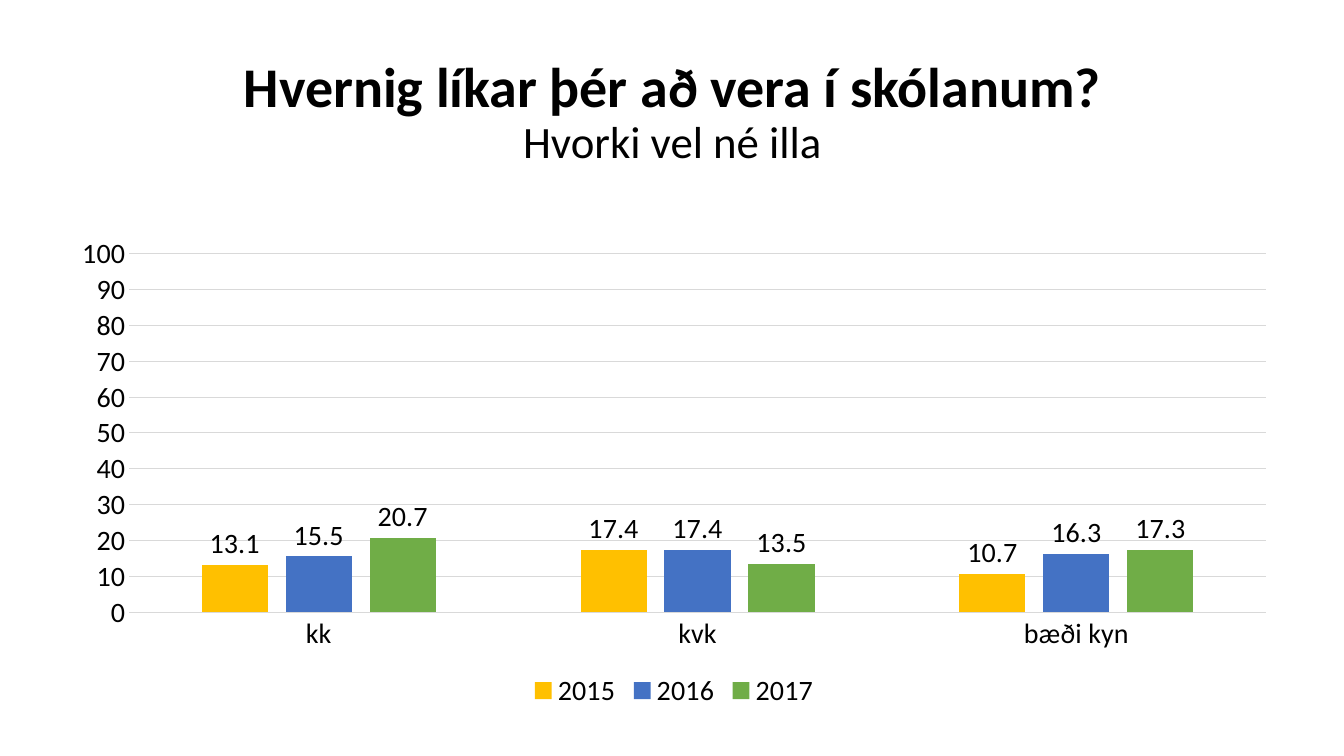
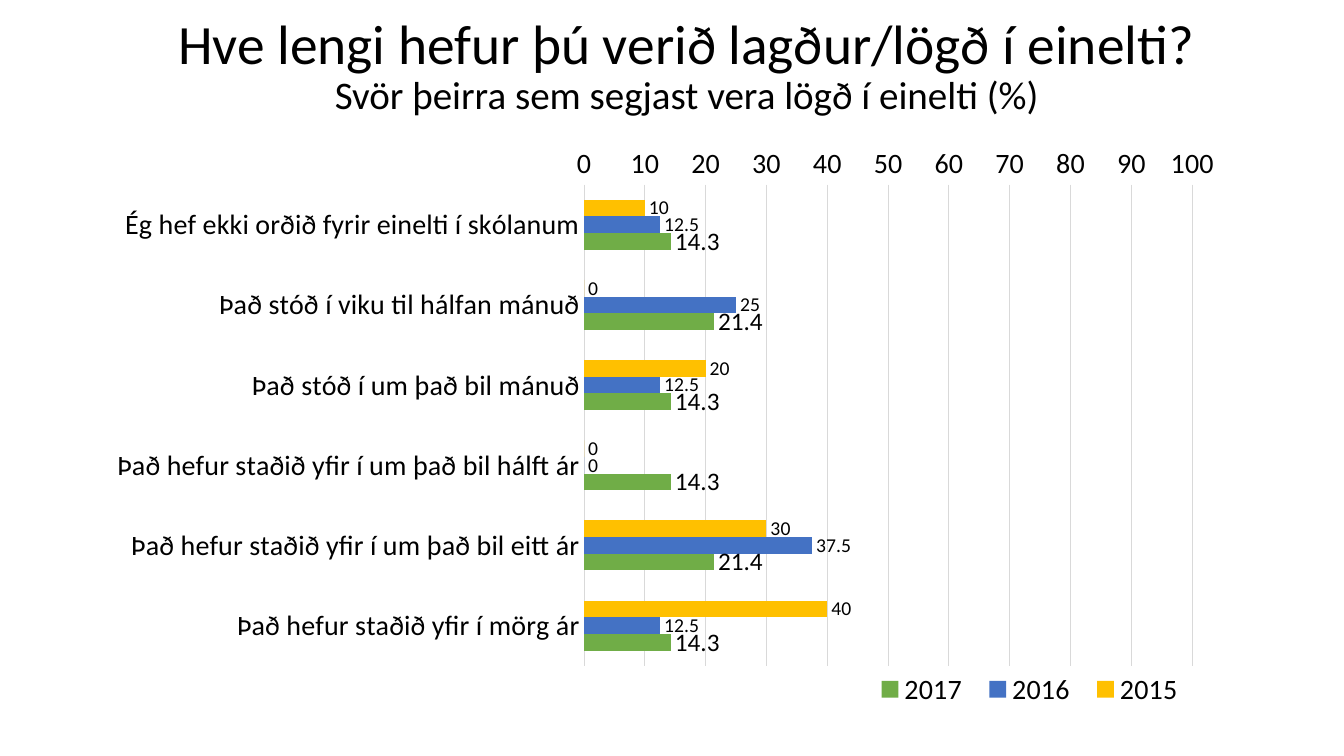
from lxml import etree
from pptx import Presentation
from pptx import util as u
from pptx.chart.data import CategoryChartData
from pptx.dml.color import RGBColor
from pptx.enum import chart as ch, text
from pptx.oxml import ns

WIDTH, HEIGHT = 13.33, 7.5
FONT, INK, RULE = "Calibri", "000000", "D9D9D9"
YEAR_COLOURS = {"2012": "5B9BD5", "2013": "ED7D31", "2014": "A5A5A5",
                "2015": "FFC000", "2016": "4472C4", "2017": "70AD47"}


def colour(value):
    """Turn a hex string into a colour."""
    return RGBColor.from_string(value)


def style_font(font, size, bold=False):
    """Give a font the shared face and ink."""
    font.name, font.size, font.bold = FONT, u.Pt(size), bold
    font.color.rgb = colour(INK)


def style_line(line):
    """Give an axis or grid line the shared thin grey."""
    line.color.rgb = colour(RULE)
    line.width = u.Pt(0.75)


def add_heading(slide, box, question, subtitle, anchor, margin=0.05):
    """Add a centred question with a smaller line below; each line is (text, size, bold)."""
    frame = slide.shapes.add_textbox(*map(u.Inches, box)).text_frame
    frame.word_wrap = True
    frame.vertical_anchor = anchor
    frame.margin_top = frame.margin_bottom = u.Inches(margin)
    heading = frame.paragraphs[0]
    heading.alignment = text.PP_ALIGN.CENTER
    heading.line_spacing = 0.9
    for index, (words, size, bold) in enumerate((question, subtitle)):
        if index:
            heading.add_line_break()
        run = heading.add_run()
        run.text = words
        style_font(run.font, size, bold)


def place(parent, position, shares, inner=False):
    """Fix the place of a chart part as shares of the chart's size."""
    for old in parent.findall(ns.qn("c:layout")):
        parent.remove(old)
    layout = etree.Element(ns.qn("c:layout"))
    manual = etree.SubElement(layout, ns.qn("c:manualLayout"))
    settings = [("layoutTarget", "inner")] if inner else []
    settings += [("xMode", "edge"), ("yMode", "edge"), *zip("xywh", shares)]
    for tag, value in settings:
        etree.SubElement(manual, ns.qn("c:" + tag)).set("val", str(value))
    parent.insert(position, layout)


def style_axes(chart):
    """Set up the answer axis and the percentage axis."""
    answers, percent = chart.category_axis, chart.value_axis
    for axis in (answers, percent):
        axis.major_tick_mark = axis.minor_tick_mark = ch.XL_TICK_MARK.NONE
        style_font(axis.tick_labels.font, 20)
    style_line(answers.format.line)
    percent.minimum_scale, percent.maximum_scale, percent.major_unit = 0, 100, 10
    percent.format.line.fill.background()
    percent.has_major_gridlines = True
    style_line(percent.major_gridlines.format.line)


def style_year(series, label_sizes, label_format):
    """Colour one year's bars and label them, or leave an unsurveyed year without values."""
    series.format.fill.solid()
    series.format.fill.fore_color.rgb = colour(YEAR_COLOURS[series.name])
    if series.name not in label_sizes:
        element = series.format.fill and series._element
        element.remove(element.find(ns.qn("c:val")))
        return
    labels = series.data_labels
    labels.show_value = True
    labels.position = ch.XL_LABEL_POSITION.OUTSIDE_END
    labels.number_format, labels.number_format_is_linked = label_format, False
    style_font(labels.font, label_sizes[series.name])


def add_year_chart(slide, kind, box, answers, results, gap, overlap, label_sizes, label_format):
    """Add a bar chart comparing the years and return it."""
    data = CategoryChartData()
    data.categories = answers
    for year in YEAR_COLOURS:
        data.add_series(year, results.get(year, ()))
    chart = slide.shapes.add_chart(kind, *map(u.Inches, box), data).chart
    chart.has_title = False
    style_font(chart.font, 10)
    style_axes(chart)
    plot = chart.plots[0]
    plot.vary_by_categories = False
    plot.gap_width, plot.overlap = gap, overlap
    for series in plot.series:
        style_year(series, label_sizes, label_format)
    chart.has_legend = True
    chart.legend.position = ch.XL_LEGEND_POSITION.BOTTOM
    chart.legend.include_in_layout = False
    style_font(chart.legend.font, 20)
    return chart


def build_school_slide(slide):
    """Show how many are neutral about school."""
    add_heading(slide, (0.92, 0.4, 11.5, 1.45),
                ("Hvernig líkar þér að vera í skólanum?", 40, True),
                ("Hvorki vel né illa", 32, False), text.MSO_ANCHOR.MIDDLE)
    results = {"2015": (13.1, 17.4, 10.7),
               "2016": (15.5, 17.4, 16.3),
               "2017": (20.7, 13.5, 17.3)}
    add_year_chart(slide, ch.XL_CHART_TYPE.COLUMN_CLUSTERED, (0.57, 2.25, 12.23, 4.83),
                   ["kk", "kvk", "bæði kyn"], results, 219, -27,
                   dict.fromkeys(results, 20), "0.0")


def build_bullying_slide(slide):
    """Show how long the bullying has lasted."""
    add_heading(slide, (0.29, 0.16, 13.04, 1.45),
                ("Hve lengi hefur þú verið lagður/lögð í einelti?", 39.6, False),
                ("Svör þeirra sem segjast vera lögð í einelti (%)", 27.9, False),
                text.MSO_ANCHOR.TOP, 0)
    durations = ["Ég hef ekki orðið fyrir einelti í skólanum",
                 "Það stóð í viku til hálfan mánuð",
                 "Það stóð í um það bil mánuð",
                 "Það hefur staðið yfir í um það bil hálft ár",
                 "Það hefur staðið yfir í um það bil eitt ár",
                 "Það hefur staðið yfir í mörg ár"]
    results = {"2015": (10, 0, 20, 0, 30, 40),
               "2016": (12.5, 25, 12.5, 0, 37.5, 12.5),
               "2017": (14.3, 21.4, 14.3, 14.3, 21.4, 14.3)}
    chart = add_year_chart(slide, ch.XL_CHART_TYPE.BAR_CLUSTERED, (0.84, 1.28, 11.36, 5.82),
                           durations, results, 182, 0,
                           {"2015": 14, "2016": 14, "2017": 18}, "General")
    chart.category_axis.reverse_order = True
    plot_area = chart.element.find(".//" + ns.qn("c:plotArea"))
    place(plot_area, 0, (0.436, 0.095, 0.531, 0.82), inner=True)
    place(chart.element.find(".//" + ns.qn("c:legend")), 1, (0.68, 0.92, 0.29, 0.07))


def main():
    """Build and save the slides."""
    deck = Presentation()
    deck.slide_width, deck.slide_height = u.Inches(WIDTH), u.Inches(HEIGHT)
    for build in (build_school_slide, build_bullying_slide):
        build(deck.slides.add_slide(deck.slide_layouts[6]))
    deck.save("out.pptx")


if __name__ == "__main__":
    main()
